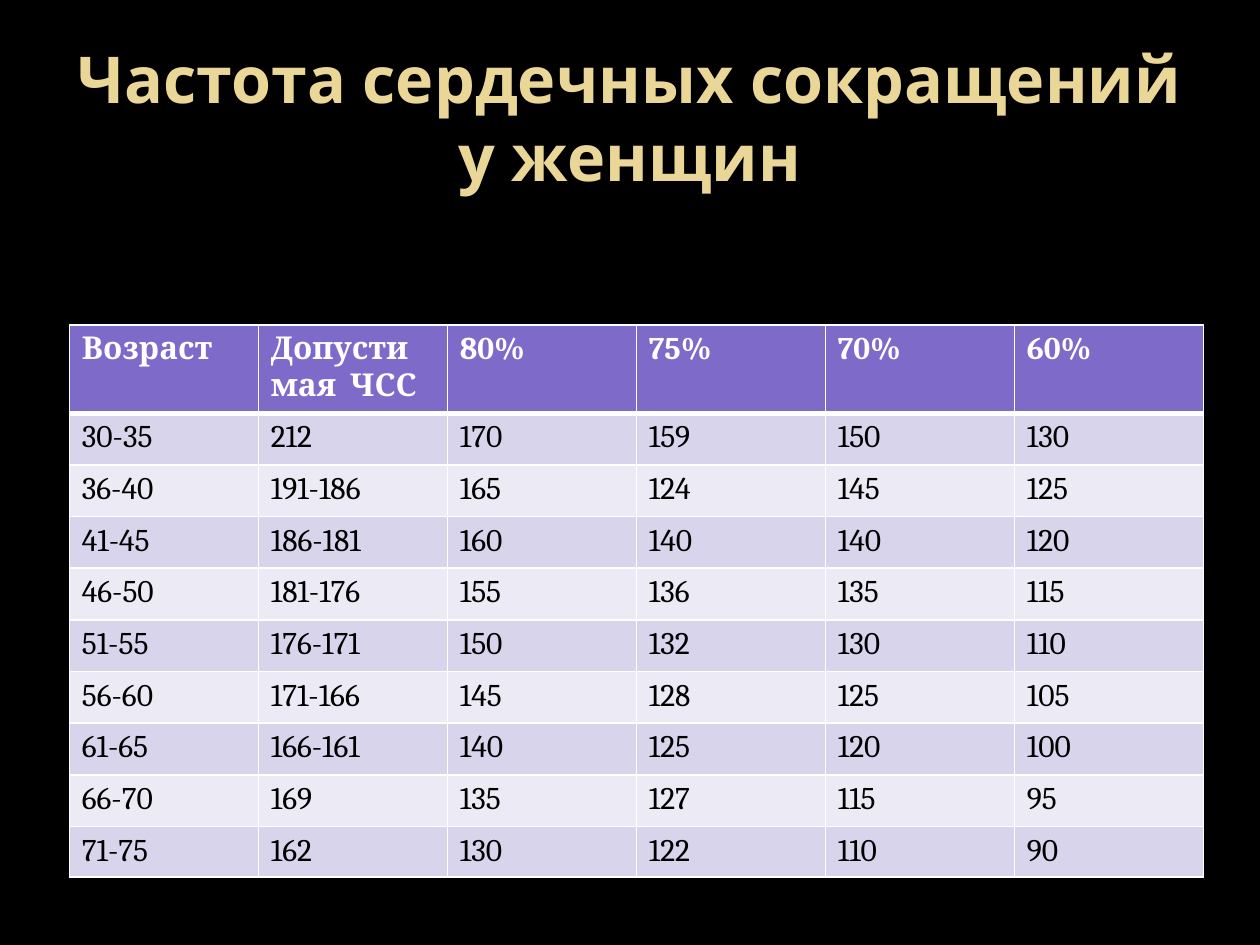
from lxml import etree
from pptx import Presentation
from pptx.dml.color import RGBColor
from pptx.enum.text import MSO_ANCHOR, PP_ALIGN
from pptx.oxml.ns import qn
from pptx.util import Inches, Pt

MIDDLE = MSO_ANCHOR.MIDDLE
CENTER = PP_ALIGN.CENTER
COLORS = {
    "background": "000000",
    "title": "EAD696",
    "header": "7E6BC9",
    "odd_row": "D8D4EB",
    "even_row": "ECEBF5",
    "header_text": "FFFFFF",
    "body_text": "000000",
    "border": "FFFFFF",
}
ROWS = [
    ("Возраст", "Допустимая  ЧСС", "80%", "75%", "70%", "60%"),
    ("30-35", "212", "170", "159", "150", "130"),
    ("36-40", "191-186", "165", "124", "145", "125"),
    ("41-45", "186-181", "160", "140", "140", "120"),
    ("46-50", "181-176", "155", "136", "135", "115"),
    ("51-55", "176-171", "150", "132", "130", "110"),
    ("56-60", "171-166", "145", "128", "125", "105"),
    ("61-65", "166-161", "140", "125", "120", "100"),
    ("66-70", "169", "135", "127", "115", "95"),
    ("71-75", "162", "130", "122", "110", "90"),
]
ROW_HEIGHTS = [0.67] + [0.41] * 8 + [0.39]


def style_text(paragraph, font_name, size, color, bold):
    font = paragraph.font
    font.name = font_name
    font.size = Pt(size)
    font.bold = bold
    font.color.rgb = RGBColor.from_string(COLORS[color])


def set_borders(cell, widths):
    """Draw the cell borders; widths maps each edge tag to points."""
    properties = cell._tc.get_or_add_tcPr()
    for position, (edge, width) in enumerate(widths.items()):
        line = etree.Element(qn(f"a:{edge}"), w=str(Pt(width)))
        fill = etree.SubElement(line, qn("a:solidFill"))
        etree.SubElement(fill, qn("a:srgbClr"), val=COLORS["border"])
        properties.insert(position, line)


# Slide
deck = Presentation()
deck.slide_width = Inches(10)
deck.slide_height = Inches(7.5)
page = deck.slides.add_slide(deck.slide_layouts[6])
page.background.fill.solid()
page.background.fill.fore_color.rgb = RGBColor.from_string(COLORS["background"])

# Title
title_box = page.shapes.add_textbox(Inches(0.5), Inches(0.3), Inches(9), Inches(1.25))
title_frame = title_box.text_frame
title_frame.word_wrap = True
title_frame.vertical_anchor = MIDDLE
title = title_frame.paragraphs[0]
title.text = "Частота сердечных сокращений у женщин"
title.alignment = CENTER
style_text(title, "Open Sans", 36.9, "title", True)

# Heart rate table
table = page.shapes.add_table(
    len(ROWS), len(ROWS[0]), Inches(0.55), Inches(2.58), Inches(9), Inches(4.34)
).table
for column in table.columns:
    column.width = Inches(1.5)

for row_index, values in enumerate(ROWS):
    table.rows[row_index].height = Inches(ROW_HEIGHTS[row_index])
    is_header = row_index == 0
    if is_header:
        fill_color = "header"
    else:
        fill_color = "odd_row" if row_index % 2 else "even_row"
    widths = {
        "lnL": 1,
        "lnR": 1,
        "lnT": 3 if row_index == 1 else 1,
        "lnB": 3 if is_header else 1,
    }
    for column_index, value in enumerate(values):
        cell = table.cell(row_index, column_index)
        cell.fill.solid()
        cell.fill.fore_color.rgb = RGBColor.from_string(COLORS[fill_color])
        set_borders(cell, widths)
        para = cell.text_frame.paragraphs[0]
        para.text = value
        text_color = "header_text" if is_header else "body_text"
        style_text(para, "Cambria", 18, text_color, is_header)

deck.save("out.pptx")
